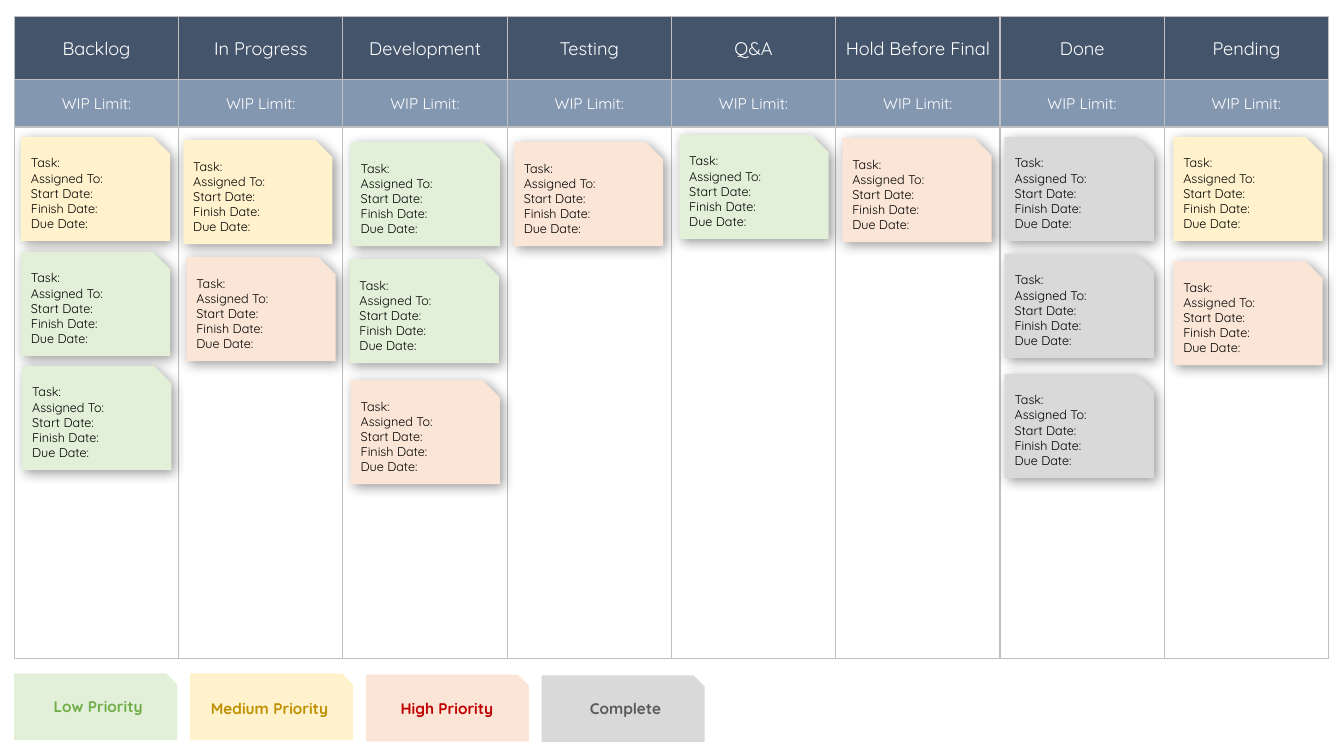
import pptx
import pptx.util
import pptx.dml.color
import pptx.enum.shapes
import pptx.enum.text
import pptx.oxml
import pptx.oxml.ns

Cm = pptx.util.Cm
ALIGN = pptx.enum.text.PP_ALIGN
MIDDLE = pptx.enum.text.MSO_ANCHOR.MIDDLE
SNIP = pptx.enum.shapes.MSO_SHAPE.SNIP_1_RECTANGLE

LOW, MEDIUM, HIGH, DONE = "E2F0D9", "FFF2CC", "FBE5D6", "D9D9D9"
STAGES = ["Backlog", "In Progress", "Development", "Testing", "Q&A",
          "Hold Before Final", "Done", "Pending"]
FIELDS = ["Task:", "Assigned To:", "Start Date:", "Finish Date:", "Due Date:"]
CARDS = [
    (0.53, 3.45, MEDIUM), (0.53, 6.35, LOW), (0.56, 9.22, LOW),
    (4.62, 3.53, MEDIUM), (4.7, 6.48, HIGH),
    (8.84, 3.58, LOW), (8.81, 6.53, LOW), (8.84, 9.58, HIGH),
    (12.95, 3.58, HIGH),
    (17.12, 3.4, LOW),
    (21.23, 3.48, HIGH),
    (25.32, 3.45, DONE), (25.32, 6.4, DONE), (25.32, 9.42, DONE),
    (29.57, 3.45, MEDIUM), (29.57, 6.58, HIGH),
]
LEGEND = [
    ("Low Priority", LOW, "70AD47", 16.97, 0.48, 17.45),
    ("Medium Priority", MEDIUM, "BF9000", 16.97, 4.8, 17.5),
    ("High Priority", HIGH, "C00000", 17, 9.27, 17.5),
    ("Complete", DONE, "595959", 17.02, 13.77, 17.5),
]


def color(code):
    return pptx.dml.color.RGBColor.from_string(code)


class Board:
    face = "Quicksand"
    edge = "BFBFBF"

    def __init__(self, slide):
        self.slide = slide

    def words(self, frame, lines, size, ink, align, bold=False):
        frame.text = "\n".join(lines)
        for para in frame.paragraphs:
            para.alignment = align
            font = para.font
            font.name, font.size, font.bold = self.face, pptx.util.Pt(size), bold
            font.color.rgb = color(ink)

    def border(self, cell):
        props = cell._tc.get_or_add_tcPr()
        for index, side in enumerate(("lnL", "lnR", "lnT", "lnB")):
            props.insert(index, pptx.oxml.parse_xml(
                f'<a:{side} {pptx.oxml.ns.nsdecls("a")} w="12700"><a:solidFill>'
                f'<a:srgbClr val="{self.edge}"/></a:solidFill></a:{side}>'))

    def table(self, left, top, width, rows):
        high = sum(row[0] for row in rows)
        grid = self.slide.shapes.add_table(
            len(rows), len(STAGES), Cm(left), Cm(top),
            Cm(width * len(STAGES)), Cm(high)).table
        grid.first_row = grid.horz_banding = False
        for column in grid.columns:
            column.width = Cm(width)
        for line, (height, texts, size, fill) in zip(grid.rows, rows):
            line.height = Cm(height)
            for cell, text in zip(line.cells, texts):
                cell.fill.solid()
                cell.fill.fore_color.rgb = color(fill)
                cell.vertical_anchor = MIDDLE
                cell.margin_left = cell.margin_right = cell.margin_top = Cm(0.03)
                cell.margin_bottom = 0
                self.border(cell)
                if text:
                    self.words(cell.text_frame, [text], size, "FFFFFF", ALIGN.CENTER)

    def note(self, left, top, width, height, fill):
        shape = self.slide.shapes.add_shape(
            SNIP, Cm(left), Cm(top), Cm(width), Cm(height))
        shape.shadow.inherit = False
        shape.fill.solid()
        shape.fill.fore_color.rgb = color(fill)
        shape.line.fill.background()
        return shape

    def card(self, left, top, fill):
        shape = self.note(left, top, 3.76, 2.62, fill)
        effects = shape._element.spPr.find(pptx.oxml.ns.qn("a:effectLst"))
        effects.append(pptx.oxml.parse_xml(
            f'<a:outerShdw {pptx.oxml.ns.nsdecls("a")} blurRad="114300" dist="38100" '
            'dir="2700000" algn="tl" rotWithShape="0"><a:srgbClr val="000000">'
            '<a:alpha val="40000"/></a:srgbClr></a:outerShdw>'))
        shape.text_frame.vertical_anchor = MIDDLE
        self.words(shape.text_frame, FIELDS, 9, "000000", ALIGN.LEFT)

    def label(self, left, top, text, ink):
        frame = self.slide.shapes.add_textbox(
            Cm(left), Cm(top), Cm(3.99), Cm(0.74)).text_frame
        frame.word_wrap = True
        self.words(frame, [text], 11, ink, ALIGN.CENTER, True)


def main():
    deck = pptx.Presentation()
    deck.slide_width, deck.slide_height = Cm(33.87), Cm(19.05)
    board = Board(deck.slides.add_slide(deck.slide_layouts[6]))
    count = len(STAGES)
    board.table(0.36, 0.41, 4.14, [
        (1.6, STAGES, 13, "44546A"),
        (1.19, ["WIP Limit:"] * count, 11, "8497B0"),
        (13.39, [""] * count, 11, "FFFFFF"),
    ])
    for index, (text, fill, ink, top, left, base) in enumerate(LEGEND):
        board.note(0.36 + 4.43 * index, top, 4.11, 1.68, fill)
        board.label(left, base, text, ink)
    for spot in CARDS:
        board.card(*spot)
    deck.save("out.pptx")


if __name__ == "__main__":
    main()
